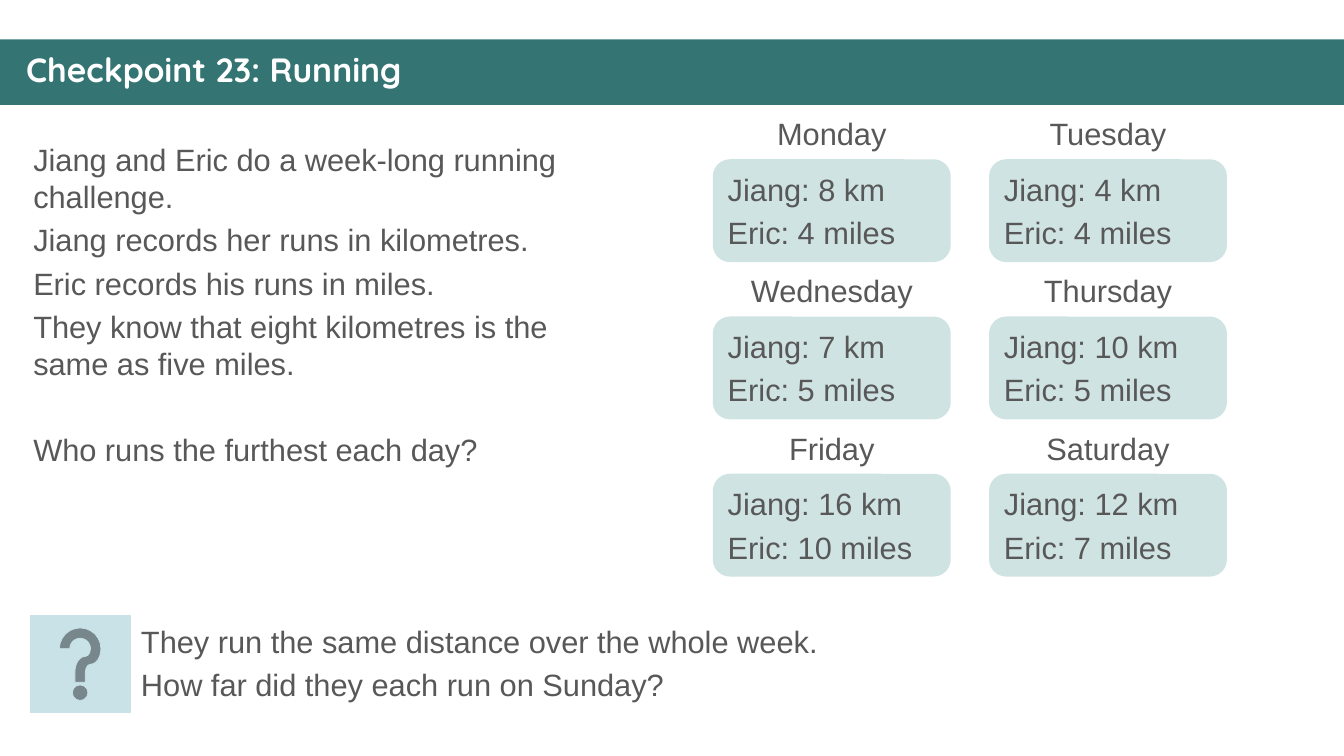
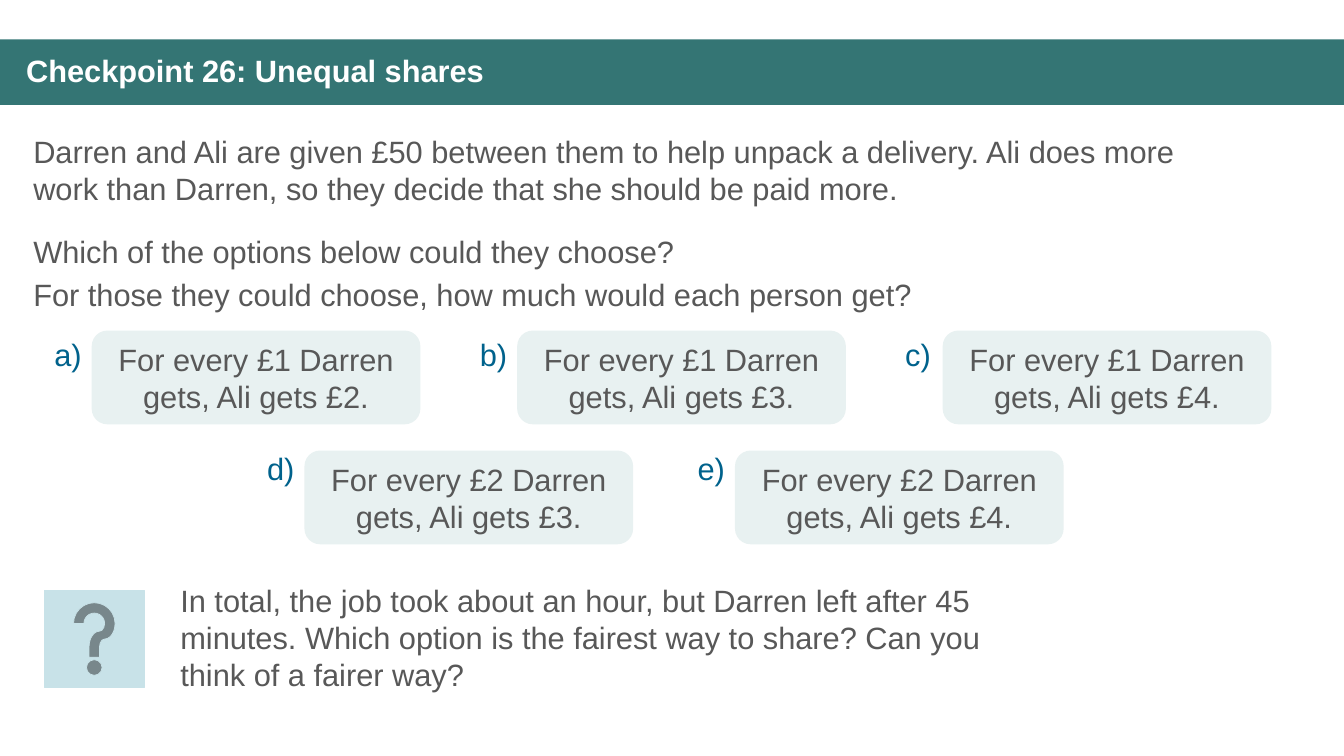
import pptx
import pptx.util
import pptx.dml.color
import pptx.enum.shapes
import pptx.enum.text
import pptx.oxml.ns
import lxml.etree

Inch, Pt = pptx.util.Inches, pptx.util.Pt
Shape = pptx.enum.shapes.MSO_SHAPE
Align = pptx.enum.text.PP_ALIGN
Anchor = pptx.enum.text.MSO_ANCHOR

# Shared look
WIDE, HIGH = 13.33, 7.5
TEAL, GREY, BLUE, WHITE = "347574", "585858", "00628C", "FFFFFF"
MINT, PALE, SKY = "D0E3E3", "E8F1F1", "C8E2E8"
SIZE, GAP = 22, 4.4

# Content: paragraphs are (text, space before)
RUN = [
    ("Jiang and Eric do a week-long running challenge.", GAP),
    ("Jiang records her runs in kilometres.", GAP),
    ("Eric records his runs in miles.", GAP),
    ("They know that eight kilometres is the same as five miles.", GAP),
    ("Who runs the furthest each day?", 35),
]
DAYS = [
    ("Monday", 8, 4), ("Tuesday", 4, 4),
    ("Wednesday", 7, 5), ("Thursday", 10, 5),
    ("Friday", 16, 10), ("Saturday", 12, 7),
]
SUNDAY = [
    ("They run the same distance over the whole week.", GAP),
    ("How far did they each run on Sunday?", GAP),
]
SHARE = [
    ("Darren and Ali are given £50 between them to help unpack a delivery. "
     "Ali does more work than Darren, so they decide that she should be "
     "paid more.", GAP),
    ("Which of the options below could they choose?", 18.6),
    ("For those they could choose, how much would each person get?", GAP),
]
# Rows of options: left, top, step, label drop, (letter, Darren, Ali)
ROWS = [
    (0.91, 3.28, 4.22, 0, [("a", 1, 2), ("b", 1, 3), ("c", 1, 4)]),
    (3.02, 4.47, 4.27, -0.06, [("d", 2, 3), ("e", 2, 4)]),
]
FAIR = [
    ("In total, the job took about an hour, but Darren left after 45 minutes. "
     "Which option is the fairest way to share? Can you think of a fairer "
     "way?", GAP),
]


def tint(code):
    return pptx.dml.color.RGBColor.from_string(code)


def write(shape, paras, color=GREY, align=Align.LEFT, anchor=Anchor.TOP,
          font="Arial", size=SIZE, bold=False):
    frame = shape.text_frame
    frame.word_wrap = True
    frame.auto_size = pptx.enum.text.MSO_AUTO_SIZE.NONE
    frame.vertical_anchor = anchor
    for i, (text, gap) in enumerate(paras):
        para = frame.add_paragraph() if i else frame.paragraphs[0]
        para.text = text
        para.alignment = align
        para.space_before = Pt(gap)
        face = para.font
        face.name, face.size, face.bold = font, Pt(size), bold
        face.color.rgb = tint(color)


def move(shape, x, y, w, h):
    shape.left, shape.top, shape.width, shape.height = map(Inch, (x, y, w, h))


def block(slide, kind, x, y, w, h, fill, line=None):
    shape = slide.shapes.add_shape(kind, *map(Inch, (x, y, w, h)))
    shape.shadow.inherit = False
    shape.fill.solid()
    shape.fill.fore_color.rgb = tint(fill)
    if line:
        shape.line.color.rgb = tint(line)
        shape.line.width = Pt(0.5)
    else:
        shape.line.fill.background()
    return shape


def label(slide, x, y, w, h, paras, **look):
    write(slide.shapes.add_textbox(*map(Inch, (x, y, w, h))), paras, **look)


def card(slide, x, y, w, h, fill, paras, align=Align.LEFT):
    shape = block(slide, Shape.ROUNDED_RECTANGLE, x, y, w, h, fill)
    write(shape, paras, align=align, anchor=Anchor.MIDDLE)


def help_box(slide, x, y):
    block(slide, Shape.ACTION_BUTTON_HELP, x, y, 0.99, 0.96, SKY, SKY)


def start(deck, title, body, place, **look):
    slide = deck.slides.add_slide(deck.slide_layouts[1])
    head, main = slide.shapes.title, slide.placeholders[1]
    move(head, 0.16, 0.48, 13.04, 0.47)
    write(head, [(title, 0)], WHITE, anchor=Anchor.MIDDLE, bold=True, **look)
    head.text_frame.paragraphs[0].line_spacing = 0.9
    move(main, *place)
    write(main, body)
    # Plain paragraphs: no bullet, no hanging indent
    for para in main.text_frame.paragraphs:
        props = para._p.get_or_add_pPr()
        props.set("marL", "0")
        props.set("indent", "0")
        lxml.etree.SubElement(props, pptx.oxml.ns.qn("a:buNone"))
    return slide


def running(deck):
    slide = start(deck, "Checkpoint 23: Running", RUN,
                  (0.23, 1.35, 5.99, 3.43), font="Quicksand", size=24)
    wide, high = 2.36, 1.02
    for i, (day, km, miles) in enumerate(DAYS):
        row, col = divmod(i, 2)
        x, y = 7.07 + 2.74 * col, 1.58 + 1.56 * row
        card(slide, x, y, wide, high, MINT,
             [(f"Jiang: {km} km", GAP), (f"Eric: {miles} miles", GAP)])
        label(slide, x, y - 0.49, wide, 0.47, [(day, GAP)],
              align=Align.CENTER)
    help_box(slide, 0.3, 6.11)
    label(slide, 1.3, 6.13, 8.92, 0.92, SUNDAY)
    return slide


def shares(deck):
    slide = start(deck, "Checkpoint 26: Unequal shares", SHARE,
                  (0.23, 1.27, 12.18, 2))
    for left, top, step, drop, items in ROWS:
        for i, (mark, one, two) in enumerate(items):
            x = left + step * i
            text = f"For every £{one} Darren gets, Ali gets £{two}."
            card(slide, x, top, 3.26, 0.93, PALE, [(text, GAP)], Align.CENTER)
            label(slide, x - 0.47, top + drop, 0.48, 0.47,
                  [(mark + ")", GAP)], color=BLUE)
    help_box(slide, 0.44, 5.86)
    label(slide, 1.69, 5.72, 8.19, 1.21, FAIR)
    return slide


def main():
    deck = pptx.Presentation()
    deck.slide_width, deck.slide_height = Inch(WIDE), Inch(HIGH)
    slide = running(deck)
    shares(deck)
    # The title band sits on the layout, behind everything
    band = block(slide, Shape.RECTANGLE, 0, 0.39, WIDE, 0.65, TEAL)
    slide.slide_layout.shapes._spTree.insert(2, band._element)
    deck.save("out.pptx")


if __name__ == "__main__":
    main()
